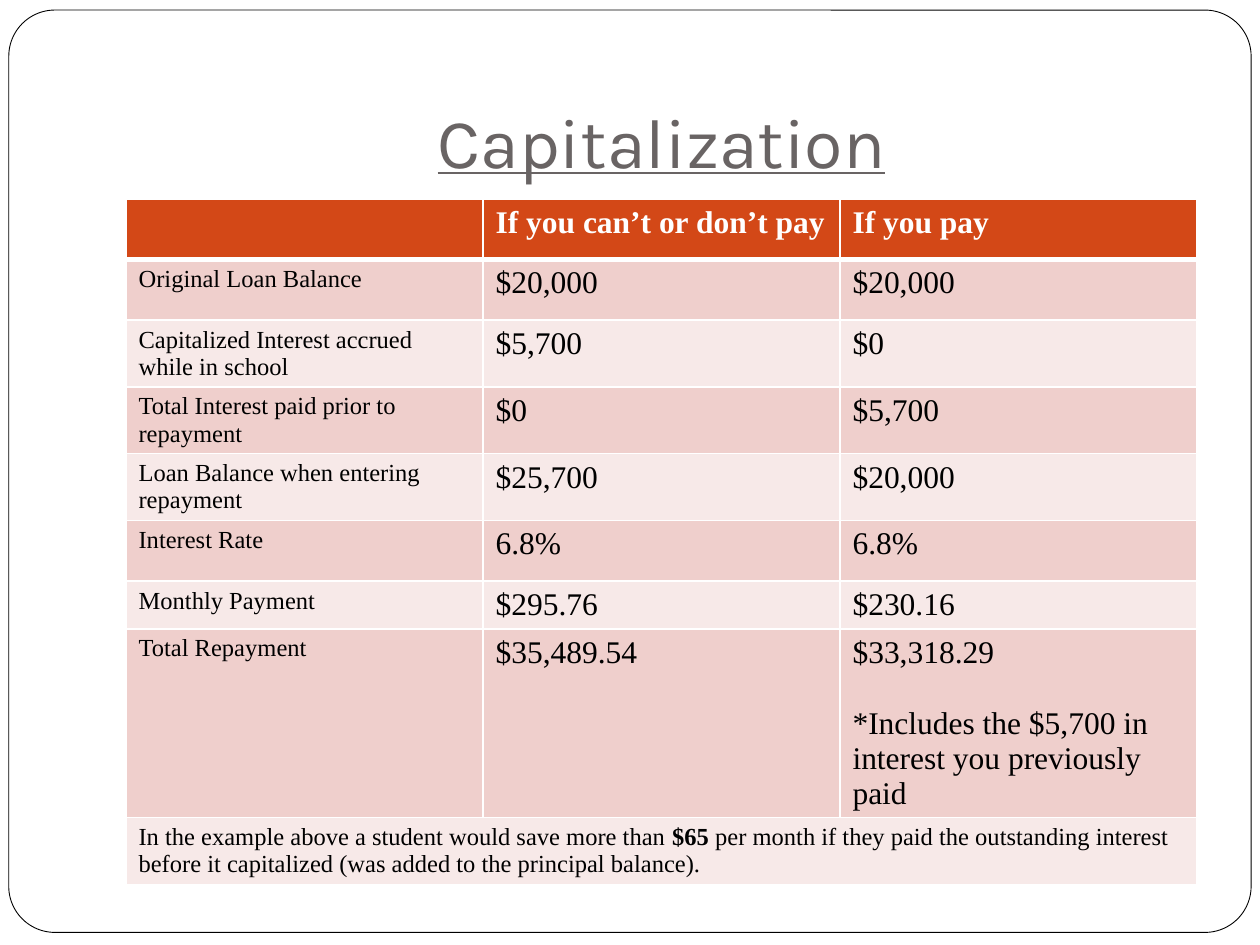
from dataclasses import dataclass

from lxml.etree import SubElement
from pptx import Presentation
from pptx.dml.color import RGBColor as Color
from pptx.enum.shapes import MSO_SHAPE as ShapeKind
from pptx.enum.text import MSO_ANCHOR as Anchor, MSO_AUTO_SIZE as AutoSize, PP_ALIGN as Align
from pptx.oxml.ns import qn
from pptx.util import Inches, Pt


@dataclass(frozen=True)
class Theme:
    """Colours, fonts and type sizes of the slide."""
    white: str = "FFFFFF"
    black: str = "000000"
    title: str = "696464"
    header: str = "D34817"
    bands: tuple = ("EFCFCC", "F7E9E8")
    title_font: str = "Karla"
    body_font: str = "Times New Roman"
    title_size: int = 40
    value_size: int = 18
    label_size: int = 14


THEME = Theme()
HEADER = ("", "If you can’t or don’t pay", "If you pay")
LOAN_ROWS = (
    ("Original Loan Balance", "$20,000", "$20,000"),
    ("Capitalized Interest accrued while in school", "$5,700", "$0"),
    ("Total Interest paid prior to repayment", "$0", "$5,700"),
    ("Loan Balance when entering repayment", "$25,700", "$20,000"),
    ("Interest Rate", "6.8%", "6.8%"),
    ("Monthly Payment", "$295.76", "$230.16"),
    ("Total Repayment", "$35,489.54", "$33,318.29"),
)
REPAYMENT_NOTE = "*Includes the $5,700 in interest you previously paid"
SUMMARY = (
    ("In the example above a student would save more than ", False),
    ("$65", True),
    (" per month if they paid the outstanding interest before it capitalized "
     "(was added to the principal balance).", False),
)
ROW_HEIGHTS = (0.48,) * 6 + (0.38, 1.48, 0.53)


def apply(target, formats):
    """Set each named attribute on the target."""
    for name, value in formats.items():
        setattr(target, name, value)


def add_text(paragraph, text, size, color, font=THEME.body_font, **formats):
    """Append a formatted run to the paragraph."""
    run = paragraph.add_run()
    run.text = text
    apply(run.font, {"name": font, "size": Pt(size), **formats})
    run.font.color.rgb = Color.from_string(color)


def style_cell(cell, fill, bottom_width=1):
    """Give the cell white borders and a solid fill."""
    properties = cell._tc.get_or_add_tcPr()
    for side, width in (("L", 1), ("R", 1), ("T", 1), ("B", bottom_width)):
        line = SubElement(properties, qn(f"a:ln{side}"), w=str(Pt(width)))
        SubElement(SubElement(line, qn("a:solidFill")), qn("a:srgbClr"), val=THEME.white)
    cell.fill.solid()
    cell.fill.fore_color.rgb = Color.from_string(fill)


def add_frame(slide, box):
    """Draw the rounded frame behind everything else."""
    frame = slide.shapes.add_shape(ShapeKind.ROUNDED_RECTANGLE, *map(Inches, box))
    frame.adjustments[0] = 0.05
    frame.shadow.inherit = False
    frame.fill.solid()
    frame.fill.fore_color.rgb = Color.from_string(THEME.white)
    frame.line.color.rgb = Color.from_string(THEME.black)
    frame.line.width = Pt(0.5)
    slide.shapes.element.insert(2, frame.element)


def place_title(slide, box, text):
    """Move and format the title placeholder."""
    title = slide.shapes.title
    apply(title, dict(zip(("left", "top", "width", "height"), map(Inches, box))))
    apply(title.text_frame, {
        "vertical_anchor": Anchor.BOTTOM, "word_wrap": True, "auto_size": AutoSize.NONE,
        "margin_left": Inches(0.1), "margin_right": Inches(0.1),
        "margin_top": Inches(0.05), "margin_bottom": Inches(0.1),
    })
    paragraph = title.text_frame.paragraphs[0]
    paragraph.alignment = Align.CENTER
    add_text(paragraph, text, THEME.title_size, THEME.title, THEME.title_font, underline=True)


def add_loan_table(slide, box):
    """Build the loan comparison with its merged summary row."""
    table = slide.shapes.add_table(len(ROW_HEIGHTS), len(HEADER), *map(Inches, box)).table
    for row, height in zip(table.rows, ROW_HEIGHTS):
        row.height = Inches(height)
    for column, text in enumerate(HEADER):
        cell = table.cell(0, column)
        style_cell(cell, THEME.header, bottom_width=3)
        if text:
            add_text(cell.text_frame.paragraphs[0], text, THEME.value_size, THEME.white, bold=True)
    for row, values in enumerate(LOAN_ROWS, start=1):
        for column, text in enumerate(values):
            cell = table.cell(row, column)
            style_cell(cell, THEME.bands[(row - 1) % 2])
            size = THEME.value_size if column else THEME.label_size
            add_text(cell.text_frame.paragraphs[0], text, size, THEME.black, bold=False)
    note = table.cell(len(LOAN_ROWS), 2).text_frame.add_paragraph()
    note.space_before = Pt(21)
    add_text(note, REPAYMENT_NOTE, THEME.value_size, THEME.black, bold=False)
    last = len(ROW_HEIGHTS) - 1
    summary = table.cell(last, 0)
    summary.merge(table.cell(last, len(HEADER) - 1))
    style_cell(summary, THEME.bands[1])
    for text, bold in SUMMARY:
        add_text(summary.text_frame.paragraphs[0], text, THEME.label_size, THEME.black, bold=bold)


def main():
    """Build and save the presentation."""
    presentation = Presentation()
    apply(presentation, {"slide_width": Inches(10), "slide_height": Inches(7.5)})
    slide = presentation.slides.add_slide(presentation.slide_layouts[5])
    add_frame(slide, (0.07, 0.08, 9.86, 7.32))
    place_title(slide, (1, 0.3, 8.5, 1.25), "Capitalization")
    add_loan_table(slide, (1, 1.58, 8.5, sum(ROW_HEIGHTS)))
    presentation.save("out.pptx")


if __name__ == "__main__":
    main()
